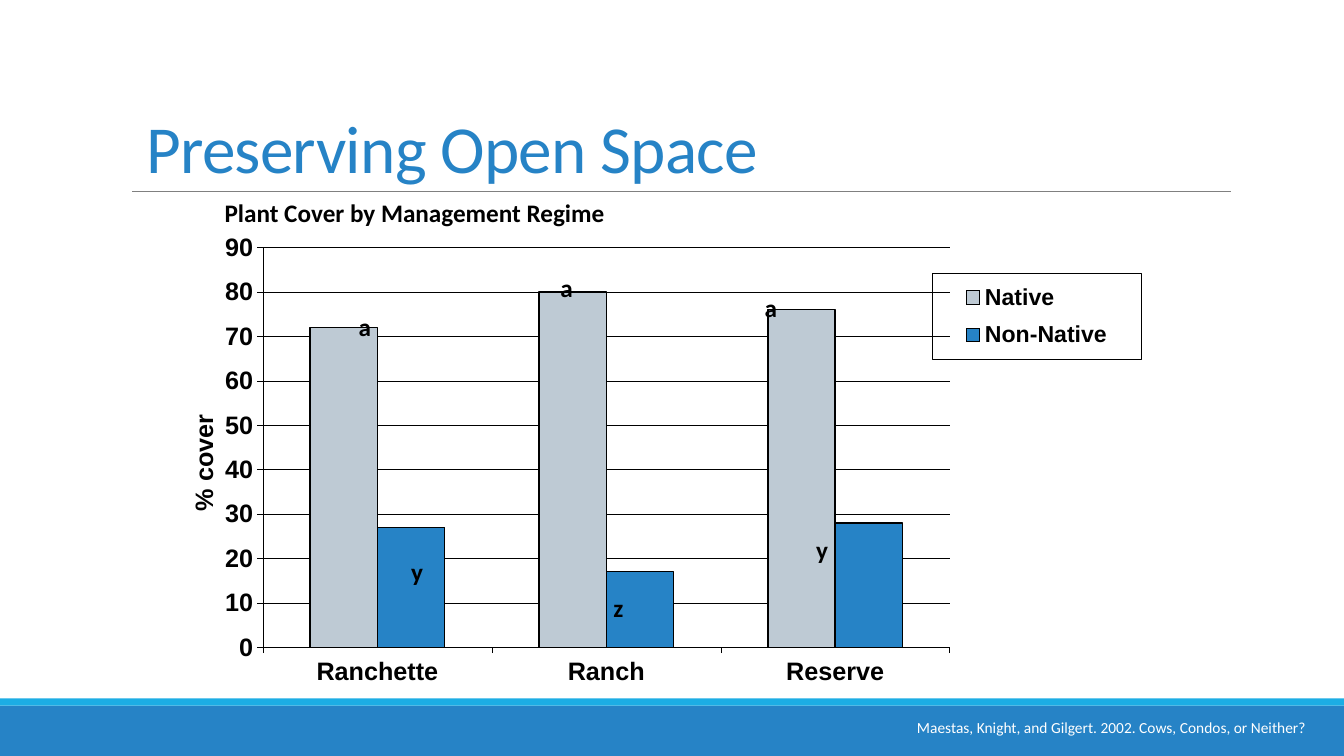
from lxml import etree
from pptx import Presentation
from pptx import util as u
from pptx.chart import data
from pptx.dml import color
from pptx.enum import chart as ch, shapes, text
from pptx.oxml import ns, xmlchemy

Cm, Pt = u.Cm, u.Pt
BLACK, BLUE, SKY, SILVER, GREY, WHITE = (
    "000000", "2683C6", "1CADE4", "BECAD4", "808080", "FFFFFF")

COVER = {"Native": ((72, 80, 76), SILVER), "Non-Native": ((27, 17, 28), BLUE)}
REGIMES = ("Ranchette", "Ranch", "Reserve")
SIGNIFICANCE = (
    ("a", 8.79, 7.72), ("a", 13.87, 6.73), ("a", 19.02, 7.24),
    ("z", 15.21, 14.81), ("y", 10.11, 13.89), ("y", 20.32, 13.34))


def rgb(value):
    return color.RGBColor.from_string(value)


def set_font(font, **values):
    font.color.rgb = rgb(values.pop("color"))
    for name, value in values.items():
        setattr(font, name, value)


def set_line(line, value, width):
    line.color.rgb = rgb(value)
    line.width = Pt(width)


def add_band(slide, top, height, fill):
    band = slide.shapes.add_shape(
        shapes.MSO_SHAPE.RECTANGLE, 0, Cm(top), Cm(33.87), Cm(height))
    band.shadow.inherit = False
    band.fill.solid()
    band.fill.fore_color.rgb = rgb(fill)
    band.line.fill.background()


def add_rule(slide, left, right, y):
    rule = slide.shapes.add_connector(
        shapes.MSO_CONNECTOR.STRAIGHT, Cm(left), Cm(y), Cm(right), Cm(y))
    set_line(rule.line, GREY, 0.5)
    etree.SubElement(rule._element.spPr, ns.qn("a:effectLst"))


def add_label(slide, wording, left, top, width=0.84, height=1.02, **changes):
    label = slide.shapes.add_textbox(Cm(left), Cm(top), Cm(width), Cm(height))
    frame = label.text_frame
    frame.word_wrap = False
    frame.auto_size = text.MSO_AUTO_SIZE.SHAPE_TO_FIT_TEXT
    frame.text = wording
    style = {"size": Pt(18), "name": "Calibri", "color": BLACK, "bold": True}
    set_font(frame.paragraphs[0].runs[0].font, **{**style, **changes})


def set_title(slide, wording):
    title = slide.shapes.title
    place = {"left": 3.43, "top": 2.51, "width": 24.33, "height": 2.34}
    for name, value in place.items():
        setattr(title, name, Cm(value))
    frame = title.text_frame
    frame.text = wording
    frame.word_wrap = True
    frame.auto_size = text.MSO_AUTO_SIZE.NONE
    frame.vertical_anchor = text.MSO_ANCHOR.BOTTOM
    line = frame.paragraphs[0]
    line.alignment = text.PP_ALIGN.LEFT
    line.line_spacing = 0.85
    run = line.runs[0]
    set_font(run.font, size=Pt(48), name="Calibri", color=BLUE)
    run.font._element.set("spc", "-50")


def place_part(part, index, target=None, **percents):
    """Give a chart part a manual layout in percents of the chart area."""
    for old in part.findall(ns.qn("c:layout")):
        part.remove(old)
    layout = xmlchemy.OxmlElement("c:layout")
    manual = etree.SubElement(layout, ns.qn("c:manualLayout"))
    settings = {"layoutTarget": target} if target else {}
    settings.update(xMode="edge", yMode="edge")
    settings.update({name: value / 100 for name, value in percents.items()})
    for name, value in settings.items():
        etree.SubElement(manual, ns.qn("c:" + name)).set("val", str(value))
    part.insert(index, layout)


def format_axes(chart):
    for axis in (chart.category_axis, chart.value_axis):
        axis.major_tick_mark = ch.XL_TICK_MARK.OUTSIDE
        axis.minor_tick_mark = ch.XL_TICK_MARK.NONE
        set_line(axis.format.line, BLACK, 0.25)
        set_font(axis.tick_labels.font, size=Pt(18), name="Arial",
                 color=BLACK, bold=True)
    chart.category_axis.tick_label_position = ch.XL_TICK_LABEL_POSITION.LOW
    cover = chart.value_axis
    scale = {"minimum_scale": 0, "maximum_scale": 90, "major_unit": 10}
    for name, value in scale.items():
        setattr(cover, name, value)
    set_line(cover.major_gridlines.format.line, BLACK, 0.25)
    frame = cover.axis_title.text_frame
    frame.text = "% cover"
    frame._txBody.bodyPr.set("rot", "-5400000")
    set_font(frame.paragraphs[0].runs[0].font, size=Pt(18), name="Arial",
             color=BLACK, bold=True)
    place_part(cover.axis_title._element, 1, x=3.9, y=35.5)


def format_legend(chart):
    chart.has_legend = True
    legend = chart.legend
    legend.position = ch.XL_LEGEND_POSITION.RIGHT
    legend.include_in_layout = False
    set_font(legend.font, size=Pt(16.5), name="Arial", color=BLACK, bold=True)
    place_part(legend._element, 1, x=76.4, y=9, w=20.2, h=16.7)
    border = xmlchemy.OxmlElement("c:spPr")
    etree.SubElement(border, ns.qn("a:noFill"))
    line = etree.SubElement(border, ns.qn("a:ln"), w=str(Pt(0.25)))
    fill = etree.SubElement(line, ns.qn("a:solidFill"))
    etree.SubElement(fill, ns.qn("a:srgbClr"), val=BLACK)
    legend._element.find(ns.qn("c:txPr")).addprevious(border)


def add_cover_chart(slide):
    cover = data.CategoryChartData()
    cover.categories = REGIMES
    for name, (values, _) in COVER.items():
        cover.add_series(name, values)
    chart = slide.shapes.add_chart(
        ch.XL_CHART_TYPE.COLUMN_CLUSTERED,
        Cm(3.58), Cm(5.72), Cm(26.06), Cm(12.98), cover).chart
    chart.has_title = False
    set_font(chart.font, size=Pt(18), name="Arial", color=BLACK, bold=True)
    plot = chart.plots[0]
    plot.gap_width = 140
    plot.overlap = 0
    plot.vary_by_categories = False
    for series, (_, fill) in zip(plot.series, COVER.values()):
        series.format.fill.solid()
        series.format.fill.fore_color.rgb = rgb(fill)
        set_line(series.format.line, BLACK, 1)
    format_axes(chart)
    format_legend(chart)
    place_part(chart._chartSpace.chart.plotArea, 0, "inner",
               x=11.7, y=4, w=66.4, h=77.6)


def main():
    deck = Presentation()
    deck.slide_width, deck.slide_height = Cm(33.87), Cm(19.05)
    slide = deck.slides.add_slide(deck.slide_layouts[5])
    add_band(slide, 17.78, 1.27, BLUE)
    add_band(slide, 17.6, 0.18, SKY)
    add_rule(slide, 3.33, 31.01, 4.83)
    add_cover_chart(slide)
    add_label(slide, "Maestas, Knight, and Gilgert. 2002. Cows, Condos, or Neither?",
              22.86, 17.98, 10.39, 0.74, size=Pt(11), color=WHITE, bold=False)
    set_title(slide, "Preserving Open Space")
    for letter, left, top in SIGNIFICANCE:
        add_label(slide, letter, left, top)
    add_label(slide, "Plant Cover by Management Regime", 5.41, 4.85, 10.16)
    deck.save("out.pptx")


if __name__ == "__main__":
    main()
